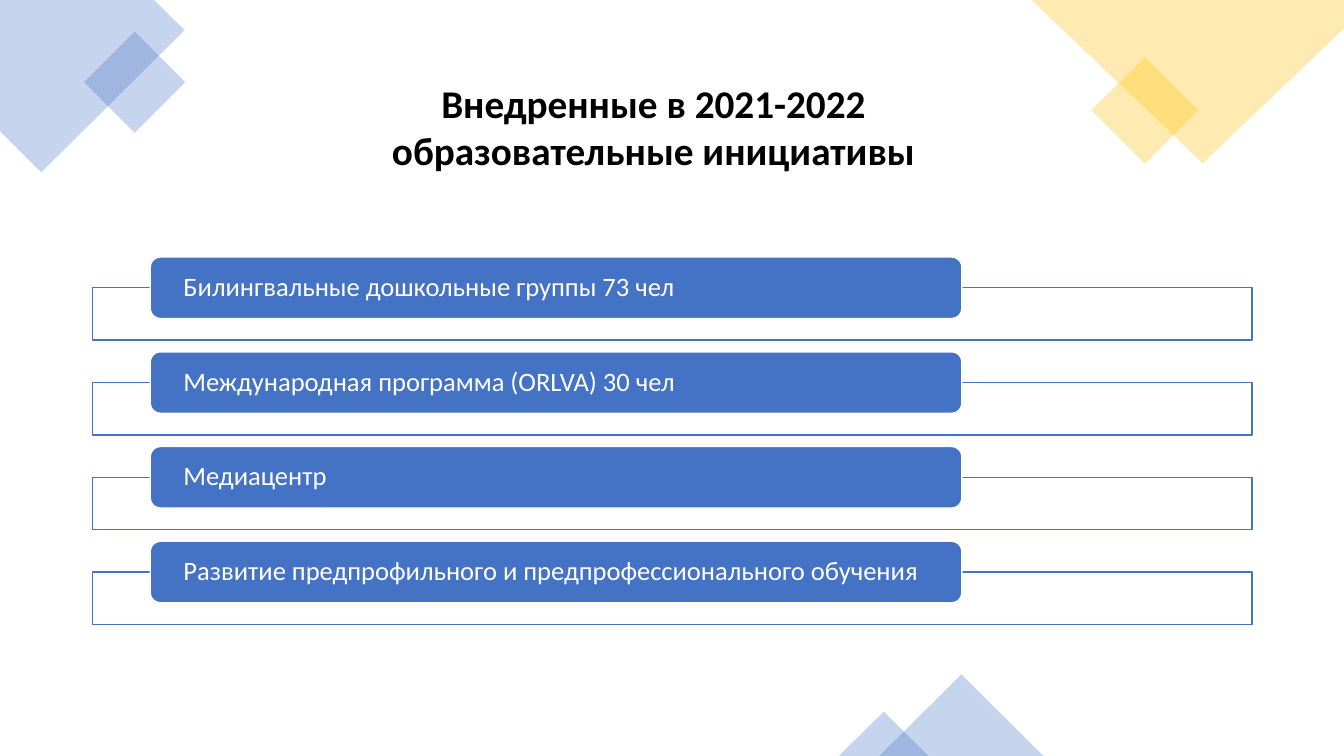
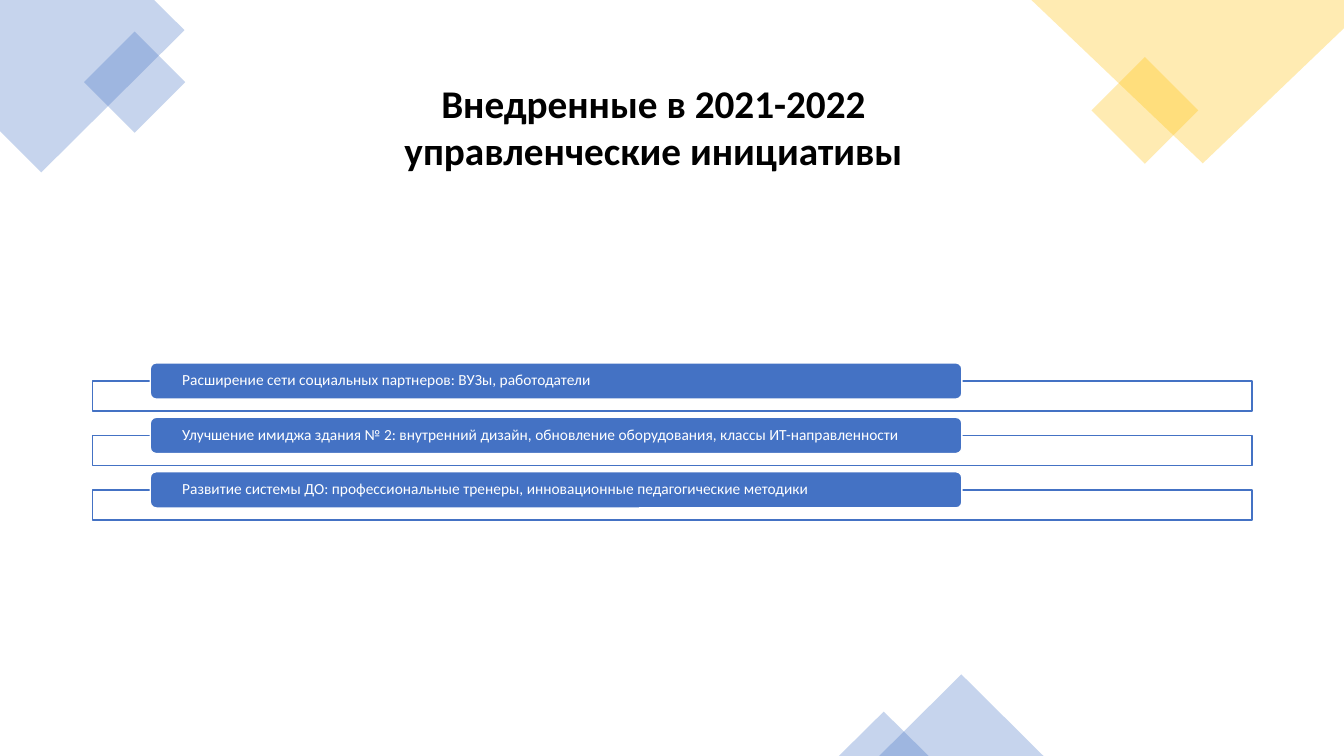
from lxml import etree
from pptx import Presentation
from pptx.dml.color import RGBColor
from pptx.enum.shapes import MSO_SHAPE as Preset
from pptx.enum.text import MSO_ANCHOR, MSO_AUTO_SIZE, PP_ALIGN
from pptx.oxml.ns import qn
from pptx.util import Inches, Pt

BLUE, YELLOW, WHITE, BLACK = "4472C4", "FFC000", "FFFFFF", "000000"
FONT = "Calibri"

# Shared decoration: outlines as page points, presets as left, top, width, height
CORNERS = [
    (BLUE, [(0, 0), (1.53, 0), (1.83, 0.3), (0.41, 1.71), (0, 1.3)]),
    (YELLOW, [(10.23, 0), (13.33, 0), (13.33, 0.28), (11.93, 1.62)]),
]
SQUARES = [(BLUE, 0.98, 0.46, 0.71), (YELLOW, 10.98, 0.72, 0.75)]
PEAKS = [(8.72, 6.69, 1.63, 0.81), (8.32, 7.06, 0.89, 0.44)]

# Title, text size, first bar top, bar height, frame height, pitch, items
SLIDES = [
    ("Внедренные в 2021-2022 образовательные инициативы",
     19, 2.55, 0.61, 0.52, 0.94,
     ["Билингвальные дошкольные группы 73 чел",
      "Международная программа (ORLVA) 30 чел",
      "Медиацентр",
      "Развитие предпрофильного и предпрофессионального обучения"]),
    ("Внедренные в 2021-2022 управленческие инициативы",
     11, 3.6, 0.36, 0.3, 0.54,
     ["Расширение сети социальных партнеров: ВУЗы, работодатели",
      "Улучшение имиджа здания № 2: внутренний дизайн, обновление "
      "оборудования, классы ИТ-направленности",
      "Развитие системы ДО: профессиональные тренеры, "
      "инновационные педагогические методики"]),
]


def paint(shape, fill, opacity=100, line=None):
    shape.shadow.inherit = False
    shape.fill.solid()
    shape.fill.fore_color.rgb = RGBColor.from_string(fill)
    if opacity < 100:
        color = shape.element.spPr.find(qn("a:solidFill"))[0]
        etree.SubElement(color, qn("a:alpha"), val=str(opacity * 1000))
    if line:
        shape.line.color.rgb = RGBColor.from_string(line)
        shape.line.width = Pt(1)
    else:
        shape.line.fill.background()


def write(paragraph, text, size, color, align, bold=False):
    paragraph.text = text
    paragraph.alignment = align
    font = paragraph.font
    font.name, font.size, font.bold = FONT, Pt(size), bold
    font.color.rgb = RGBColor.from_string(color)


prs = Presentation()
prs.slide_width, prs.slide_height = Inches(13.33), Inches(7.5)

for title, size, first_top, bar_height, frame_height, pitch, items in SLIDES:
    shapes = prs.slides.add_slide(prs.slide_layouts[6]).shapes

    # Corner decoration
    for color, points in CORNERS:
        start, *rest = [(Inches(x), Inches(y)) for x, y in points]
        outline = shapes.build_freeform(*start)
        outline.add_line_segments(rest)
        paint(outline.convert_to_shape(), color, 30)
    for color, left, top, side in SQUARES:
        square = shapes.add_shape(Preset.RECTANGLE, Inches(left), Inches(top),
                                  Inches(side), Inches(side))
        square.rotation = 45
        paint(square, color, 30)

    # Initiatives: each bar overlaps the top edge of its frame
    for index, item in enumerate(items):
        top = first_top + index * pitch
        frame = shapes.add_shape(Preset.RECTANGLE, Inches(0.92), Inches(top + bar_height / 2),
                                 Inches(11.5), Inches(frame_height))
        paint(frame, WHITE, 90, BLUE)
        bar = shapes.add_shape(Preset.ROUNDED_RECTANGLE, Inches(1.49), Inches(top),
                               Inches(8.05), Inches(bar_height))
        paint(bar, BLUE, line=WHITE)
        label = bar.text_frame
        label.word_wrap = True
        label.vertical_anchor = MSO_ANCHOR.MIDDLE
        label.margin_left = label.margin_right = Inches(0.3)
        label.margin_top = label.margin_bottom = 0
        write(label.paragraphs[0], item, size, WHITE, PP_ALIGN.LEFT)
        label.paragraphs[0].line_spacing = 0.9

    # Bottom decoration
    for box in PEAKS:
        peak = shapes.add_shape(Preset.ISOSCELES_TRIANGLE, *map(Inches, box))
        paint(peak, BLUE, 30)

    # Title
    heading = shapes.add_textbox(Inches(3.05), Inches(0.74), Inches(6.86), Inches(1.04)).text_frame
    heading.word_wrap = True
    heading.auto_size = MSO_AUTO_SIZE.SHAPE_TO_FIT_TEXT
    write(heading.paragraphs[0], title, 28, BLACK, PP_ALIGN.CENTER, bold=True)

prs.save("out.pptx")
